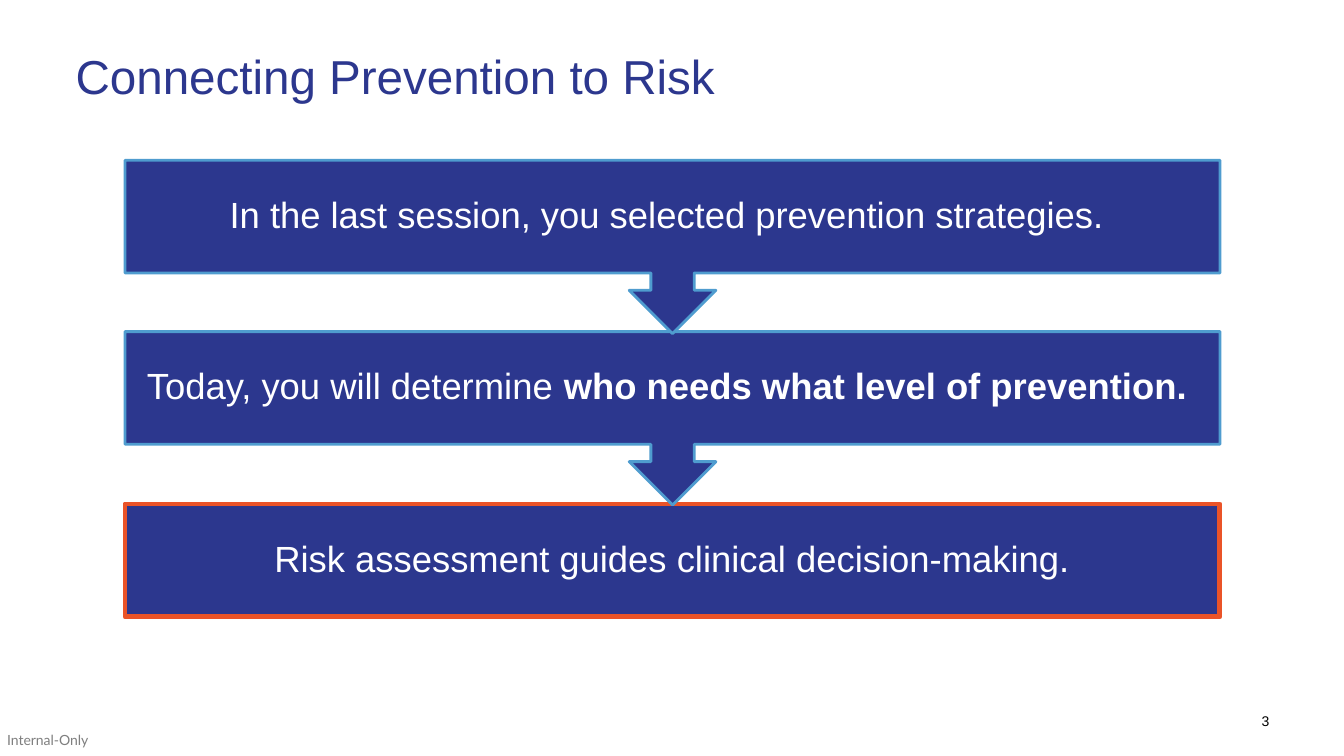
"""Build the slide that links prevention to risk in three steps."""
from pptx import Presentation
from pptx.dml.color import RGBColor
from pptx.enum.shapes import MSO_SHAPE as Shape
from pptx.enum.text import MSO_ANCHOR as Anchor, MSO_AUTO_SIZE as Fit, PP_ALIGN as Align
from pptx.util import Inches, Pt

NAVY = RGBColor(0x2C, 0x37, 0x8E)
SKY = RGBColor(0x4F, 0x9C, 0xCF)
ORANGE = RGBColor(0xEA, 0x53, 0x28)
WHITE = RGBColor(0xFF, 0xFF, 0xFF)
BLACK = RGBColor(0, 0, 0)
GRAY = RGBColor(0x7F, 0x7F, 0x7F)


def set_frame(frame, pad, anchor):
    frame.word_wrap = True
    frame.auto_size = Fit.NONE
    frame.vertical_anchor = anchor
    frame.margin_left = frame.margin_right = Inches(pad)
    frame.margin_top = frame.margin_bottom = Inches(pad)


def set_font(run, size, color, name="Arial", bold=False):
    run.font.size = Pt(size)
    run.font.color.rgb = color
    run.font.name = name
    run.font.bold = bold


deck = Presentation()
deck.slide_width, deck.slide_height = Inches(13.33), Inches(7.5)
slide = deck.slides.add_slide(deck.slide_layouts[5])
shapes = slide.shapes

title = shapes.title
title.left, title.top = Inches(0.75), Inches(0.53)
title.width, title.height = Inches(11.83), Inches(1.06)
set_frame(title.text_frame, 0, Anchor.TOP)
title.text_frame.text = "Connecting Prevention to Risk"
line = title.text_frame.paragraphs[0]
line.alignment = Align.LEFT
line.line_spacing = 0.9
set_font(line.runs[0], 34, NAVY)

notes = [
    ("3", 12.01, 7.07, 0.58, Align.RIGHT, "Arial", BLACK),
    ("Internal-Only", 0.07, 7.26, 0.82, Align.LEFT, "Lato", GRAY),
]
for text, left, top, width, align, font, color in notes:
    box = shapes.add_textbox(Inches(left), Inches(top), Inches(width), Inches(0.17))
    set_frame(box.text_frame, 0, Anchor.TOP)
    box.text_frame.text = text
    line = box.text_frame.paragraphs[0]
    line.alignment = align
    set_font(line.runs[0], 10, color, font)

LEFT, WIDTH, HEIGHT = Inches(1.24), Inches(10.86), Inches(1.12)
CALL = Inches(1.72)
steps = [
    (5, Shape.RECTANGLE, HEIGHT, 0, ORANGE, 3.5,
     ["Risk assessment guides clinical decision-making."]),
    (3.29, Shape.UP_ARROW_CALLOUT, CALL, 180, SKY, 2,
     ["Today, you will determine ", "who needs what level of prevention. "]),
    (1.59, Shape.UP_ARROW_CALLOUT, CALL, 180, SKY, 2,
     ["In the last session, you selected prevention strategies. "]),
]
for top, kind, tall, turn, edge, weight, parts in steps:
    step = shapes.add_shape(kind, LEFT, Inches(top), WIDTH, tall)
    step.rotation = turn
    step.shadow.inherit = False
    step.fill.solid()
    step.fill.fore_color.rgb = NAVY
    step.line.color.rgb = edge
    step.line.width = Pt(weight)

    label = shapes.add_textbox(LEFT, Inches(top), WIDTH, HEIGHT)
    set_frame(label.text_frame, 0.2, Anchor.MIDDLE)
    line = label.text_frame.paragraphs[0]
    line.alignment = Align.CENTER
    line.line_spacing = 0.9
    for i, part in enumerate(parts):
        run = line.add_run()
        run.text = part
        set_font(run, 26, WHITE, bold=i > 0)

deck.save("out.pptx")
